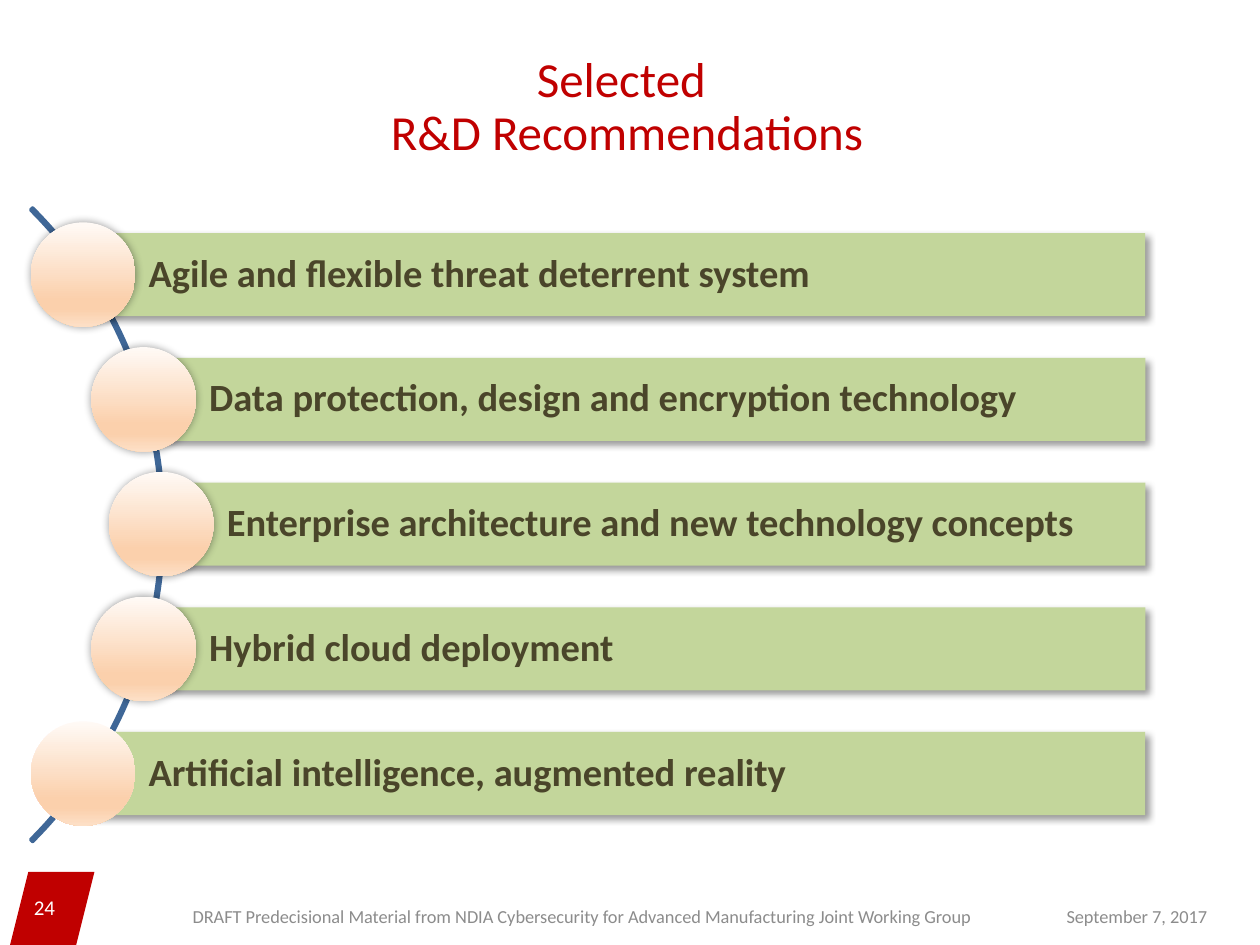
from lxml.etree import SubElement
from pptx import Presentation
from pptx.dml.color import RGBColor
from pptx.enum.shapes import MSO_SHAPE as SHAPE
from pptx.enum.text import MSO_ANCHOR as ANCHOR, PP_ALIGN as ALIGN
from pptx.oxml.ns import qn
from pptx.util import Inches, Pt

RED, GREY, WHITE = "C00000", "8C8C8C", "FFFFFF"
GREEN, BROWN, BLUE = "C3D69B", "4A452A", "3F6797"
DISC_STOPS = [(0, "FFFAF6"), (74, "FBD0AC"), (83, "FBD0AC"), (100, "FDE0C7")]

prs = Presentation()
prs.slide_width, prs.slide_height = Inches(10), Inches(7.5)
slide = prs.slides.add_slide(prs.slide_layouts[6])


def rgb(value):
    return RGBColor.from_string(value)


def add_shadow(shape, blur, distance, angle):
    """Give the shape a 40% black outer shadow; blur and distance in points."""
    effects = shape._element.spPr.find(qn("a:effectLst"))
    outer = SubElement(effects, qn("a:outerShdw"), blurRad=str(Pt(blur)),
                       dist=str(Pt(distance)), dir=str(angle * 60000),
                       rotWithShape="0")
    black = SubElement(outer, qn("a:srgbClr"), val="000000")
    SubElement(black, qn("a:alpha"), val="40000")


# Corner tab behind the page number
tab = slide.shapes.add_shape(SHAPE.PARALLELOGRAM, Inches(0.08), Inches(6.92),
                             Inches(0.67), Inches(0.58))
tab.shadow.inherit = False
tab.fill.solid()
tab.fill.fore_color.rgb = rgb(RED)
tab.line.fill.background()

# Curve that the discs sit on
curve = slide.shapes.add_shape(SHAPE.BLOCK_ARC, Inches(-5.81), Inches(0.61),
                               Inches(7.11), Inches(7.11))
curve.adjustments[0] = 189
curve.adjustments[1] = 27
curve.adjustments[2] = 0.003
curve.shadow.inherit = False
curve.fill.background()
curve.line.color.rgb = rgb(BLUE)
curve.line.width = Pt(2)

# Recommendations: (text, centre of its disc)
recommendations = [
    ("Agile and flexible threat deterrent system", 0.66),
    ("Data protection, design and encryption technology", 1.14),
    ("Enterprise architecture and new technology concepts", 1.28),
    ("Hybrid cloud deployment", 1.14),
    ("Artificial intelligence, augmented reality", 0.66),
]
BAR_RIGHT, BAR_HEIGHT, DISC, PITCH = 9.09, 0.66, 0.83, 0.99
for row, (text, center) in enumerate(recommendations):
    top = 1.85 + row * PITCH
    bar = slide.shapes.add_shape(SHAPE.RECTANGLE, Inches(center), Inches(top),
                                 Inches(BAR_RIGHT - center), Inches(BAR_HEIGHT))
    bar.shadow.inherit = False
    add_shadow(bar, 4, 3, 45)
    bar.fill.solid()
    bar.fill.fore_color.rgb = rgb(GREEN)
    bar.line.fill.background()
    frame = bar.text_frame
    frame.text = text
    frame.word_wrap = True
    frame.vertical_anchor = ANCHOR.MIDDLE
    frame.margin_left = Inches(0.52)
    frame.margin_top = frame.margin_right = frame.margin_bottom = Inches(0.06)
    label = frame.paragraphs[0]
    label.alignment = ALIGN.LEFT
    label.line_spacing = 0.9
    font = label.runs[0].font
    font.name, font.size, font.bold = "Calibri", Pt(22), True
    font.color.rgb = rgb(BROWN)

    disc = slide.shapes.add_shape(
        SHAPE.OVAL, Inches(center - DISC / 2),
        Inches(top + (BAR_HEIGHT - DISC) / 2), Inches(DISC), Inches(DISC))
    disc.shadow.inherit = False
    if row < len(recommendations) - 1:
        add_shadow(disc, 5, 0, 0)
    disc.line.fill.background()
    disc.fill.gradient()
    disc.fill.gradient_angle = 270
    stops = disc._element.spPr.find(".//" + qn("a:gsLst"))
    stops.clear()
    for position, color in DISC_STOPS:
        stop = SubElement(stops, qn("a:gs"), pos=str(position * 1000))
        SubElement(stop, qn("a:srgbClr"), val=color)

# Footer and title: text, box, size, colour, alignment, anchor, line spacing
texts = [
    ("September 7, 2017", (8.34, 7.07, 1.34, 0.4),
     10.5, GREY, ALIGN.RIGHT, ANCHOR.MIDDLE, 1.0),
    ("DRAFT Predecisional Material from NDIA Cybersecurity for Advanced "
     "Manufacturing Joint Working Group", (0.83, 7.07, 7.58, 0.4),
     10.5, GREY, ALIGN.CENTER, ANCHOR.MIDDLE, 1.0),
    ("24", (0.17, 7, 0.58, 0.4), 12, WHITE, ALIGN.LEFT, ANCHOR.MIDDLE, 1.0),
    ("Selected \nR&D Recommendations", (0, 0.17, 9.95, 1.16),
     28, RED, ALIGN.CENTER, ANCHOR.BOTTOM, 0.9),
]
for text, box, size, color, alignment, anchor, spacing in texts:
    frame = slide.shapes.add_textbox(*map(Inches, box)).text_frame
    frame.text = text
    frame.word_wrap = True
    frame.vertical_anchor = anchor
    for paragraph in frame.paragraphs:
        paragraph.alignment = alignment
        paragraph.line_spacing = spacing
        font = paragraph.runs[0].font
        font.name, font.size = "Calibri", Pt(size)
        font.color.rgb = rgb(color)

prs.save("out.pptx")
